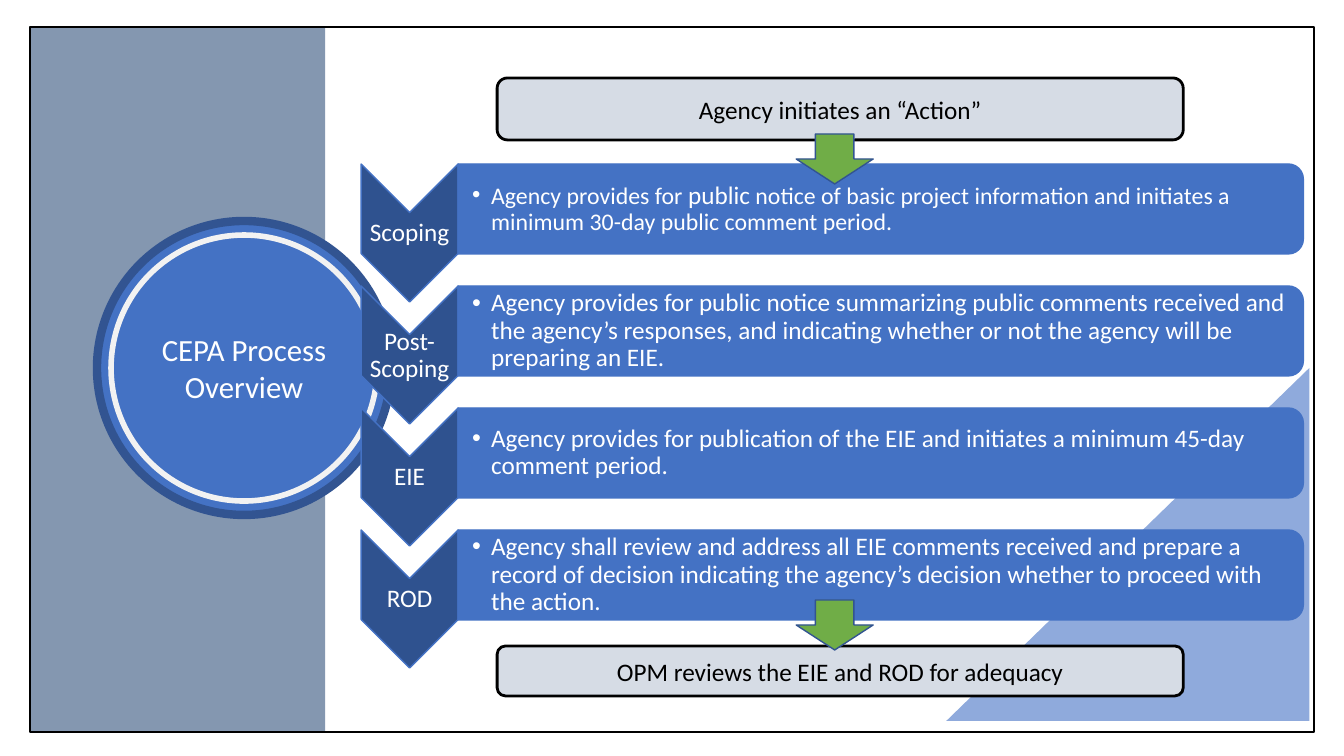
"""Build the CEPA process overview slide."""
from lxml.etree import SubElement
from pptx import Presentation
from pptx.dml.color import RGBColor
from pptx.enum.shapes import MSO_SHAPE as KIND
from pptx.enum.text import MSO_ANCHOR, MSO_AUTO_SIZE, PP_ALIGN
from pptx.oxml.ns import qn
from pptx.util import Inches, Pt

TITLE = "CEPA Process Overview"
STEPS = [
    ("Scoping", [("Agency provides for ", 17), ("public", 18),
                 (" notice of basic project information and initiates a "
                  "minimum 30-day public comment period.", 17)]),
    ("Post-Scoping", [("Agency provides for public notice summarizing public comments "
                       "received and the agency’s responses, and indicating whether "
                       "or not the agency will be preparing an EIE.", 18)]),
    ("EIE", [("Agency provides for publication of the EIE and initiates a "
              "minimum 45-day comment period.", 18)]),
    ("ROD", [("Agency shall review and address all EIE comments received and "
              "prepare a record of decision indicating the agency’s decision "
              "whether to proceed with the action.", 18)]),
]
ENDS = [("Agency initiates an “Action”", 78, 62),
        ("OPM reviews the EIE and ROD for adequacy", 646, 50)]
ARROWS = [134, 600]
TOP, PITCH = 164, 122
BLUE, NAVY, DARK, WHITE, BLACK = "4472C4", "2F528F", "325491", "FFFFFF", "000000"


def px(num):
    return round(num * 914400 / 100.8)


def tint(code):
    return RGBColor.from_string(code)


def place(item, x, y, w, h):
    item.left, item.top, item.width, item.height = map(px, (x, y, w, h))


def draw(kind, box, fill=None, line=None, thick=1, turn=False):
    x, y, w, h = box
    if turn:
        x, y, w, h = x + (w - h) / 2, y + (h - w) / 2, h, w
    item = slide.shapes.add_shape(kind, px(x), px(y), px(w), px(h))
    item.shadow.inherit = False
    item.rotation = 90 if turn else 0
    if fill:
        item.fill.solid()
        item.fill.fore_color.rgb = tint(fill)
    else:
        item.fill.background()
    if line:
        item.line.color.rgb = tint(line)
        item.line.width = Pt(thick)
    else:
        item.line.fill.background()
    return item


def write(item, runs, color=WHITE, space=1.0, pad=None, bullet=False):
    frame = item.text_frame
    frame.word_wrap = True
    frame.auto_size = MSO_AUTO_SIZE.NONE
    frame.vertical_anchor = MSO_ANCHOR.MIDDLE
    if pad is not None:
        frame.margin_left = px(pad)
        frame.margin_right = frame.margin_top = frame.margin_bottom = px(1)
    para = frame.paragraphs[0]
    if bullet:
        props = para._p.get_or_add_pPr()
        props.set("marL", str(px(19)))
        props.set("indent", str(px(-19)))
        SubElement(props, qn("a:buFont")).set("typeface", "Arial")
        SubElement(props, qn("a:buChar")).set("char", "•")
    para.alignment = PP_ALIGN.LEFT if bullet else PP_ALIGN.CENTER
    para.line_spacing = space
    para.space_before = Pt(0)
    for text, size in runs:
        run = para.add_run()
        run.text = text
        font = run.font
        font.name, font.size, font.bold = "Calibri", Pt(size), False
        font.color.rgb = tint(color)


def raise_up(item):
    slide.shapes._spTree.append(item._element)


deck = Presentation()
deck.slide_width, deck.slide_height = Inches(13.33), Inches(7.5)
slide = deck.slides.add_slide(deck.slide_layouts[4])
title, *bodies = list(slide.placeholders)

wedge = draw(KIND.RIGHT_TRIANGLE, (946, 368, 363, 353), "8FAADC")
wedge._element.spPr.find(qn("a:xfrm")).set("flipH", "1")
draw(KIND.RECTANGLE, (29, 27, 296, 705), "8497B0")
draw(KIND.OVAL, (97, 221, 294, 294), BLUE, DARK, 6)
draw(KIND.OVAL, (111, 235, 266, 266), None, "F2F2F2", 4)
raise_up(title)
place(title, 140, 264, 208, 208)
write(title, [(TITLE, 22)])

for row, ((name, runs), body) in enumerate(zip(STEPS, bodies)):
    y = TOP + row * PITCH
    draw(KIND.CHEVRON, (361, y, 97, 138), NAVY, BLUE, turn=True)
    label = slide.shapes.add_textbox(px(361), px(y + 49), px(97), px(41))
    write(label, [(name, 18)], space=0.9, pad=1)
    draw(KIND.ROUND_2_SAME_RECTANGLE, (458, y, 845, 90), BLUE, BLUE, turn=True)
    raise_up(body)
    place(body, 458, y + 4, 841, 82)
    write(body, runs, space=0.9, pad=14, bullet=True)

for text, y, high in ENDS:
    card = draw(KIND.ROUNDED_RECTANGLE, (497, y, 686, high), "D6DCE5", BLACK, 2)
    write(card, [(text, 18)], BLACK)
for y in ARROWS:
    draw(KIND.DOWN_ARROW, (796, y, 77, 50), "70AD47", DARK)
draw(KIND.RECTANGLE, (30, 27, 1284, 705), None, BLACK, 1.5)

deck.save("out.pptx")
